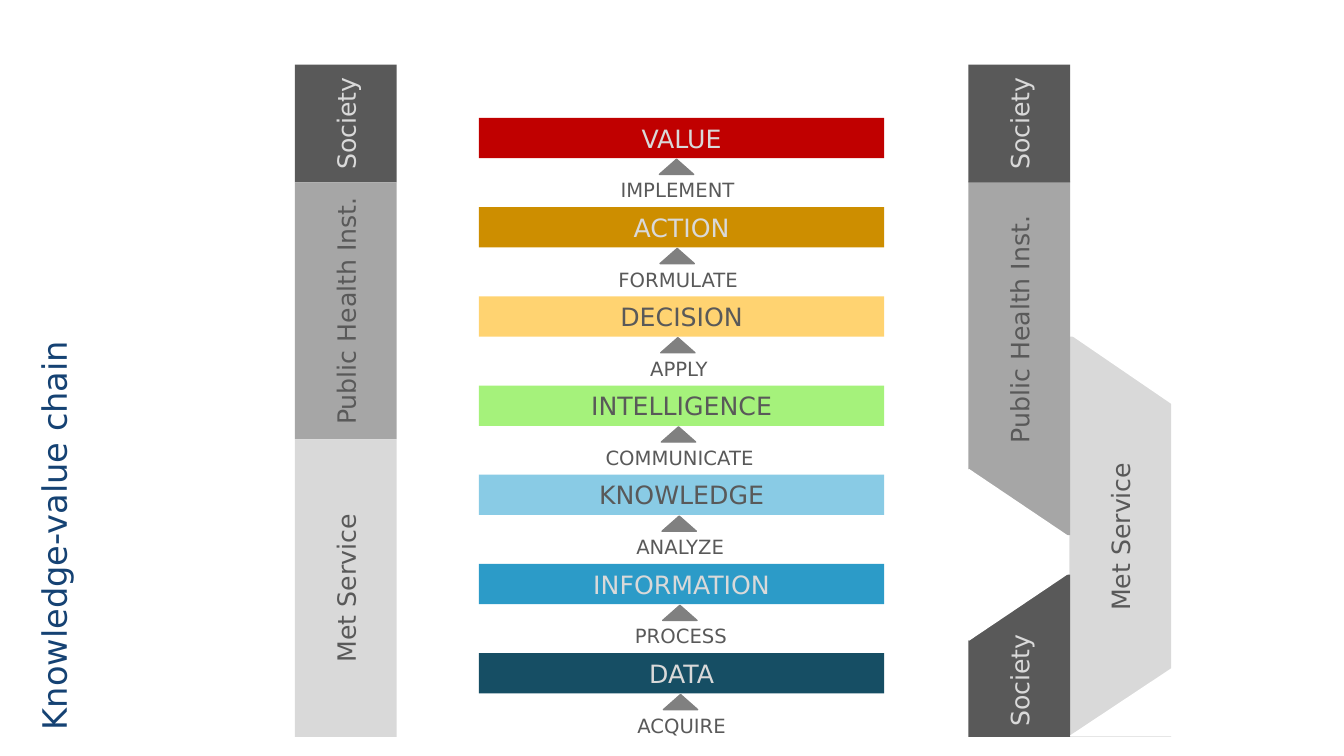
"""Build the knowledge-value chain slide."""
from pptx import Presentation
from pptx import util as u
from pptx.dml.color import RGBColor
from pptx.enum import shapes, text

DARK, MID, LIGHT, WHITE = "595959", "A6A6A6", "D9D9D9", "FFFFFF"
ARROW, NAVY = "808080", "154273"
CENTER, LEFT = text.PP_ALIGN.CENTER, text.PP_ALIGN.LEFT
PRESET = shapes.MSO_SHAPE


def color(value):
    return RGBColor.from_string(value)


class ChainSlide:
    font = "DejaVu Sans"

    def __init__(self, presentation):
        self.slide = presentation.slides.add_slide(presentation.slide_layouts[5])

    def set_text(self, frame, words, size, ink, align=CENTER, anchor=text.MSO_ANCHOR.MIDDLE):
        frame.text = words
        frame.word_wrap = True
        frame.auto_size = text.MSO_AUTO_SIZE.NONE
        frame.vertical_anchor = anchor
        paragraph = frame.paragraphs[0]
        paragraph.alignment = align
        paragraph.font.name = self.font
        paragraph.font.size = u.Pt(size)
        paragraph.font.color.rgb = color(ink)
        return paragraph

    def title(self, words, box):
        shape = self.slide.shapes.title
        shape.left, shape.top, shape.width, shape.height = map(u.Inches, box)
        shape.rotation = 270
        paragraph = self.set_text(shape.text_frame, words, 24, NAVY, LEFT, text.MSO_ANCHOR.BOTTOM)
        paragraph.line_spacing = 0.9

    def shape(self, preset, box, fill, outlined=False):
        shape = self.slide.shapes.add_shape(preset, *map(u.Inches, box))
        shape.shadow.inherit = False
        shape.fill.solid()
        shape.fill.fore_color.rgb = color(fill)
        if outlined:
            shape.line.color.rgb = color(fill)
            shape.line.width = u.Pt(1)
        else:
            shape.line.fill.background()
        return shape

    def bar(self, words, box, fill, ink, align=CENTER):
        shape = self.shape(PRESET.RECTANGLE, box, fill)
        self.set_text(shape.text_frame, words, 18, ink, align)
        return shape

    def column(self, words, center_x, top, length, fill, ink, align=CENTER, indent=0.1):
        """Draw a bar turned to read upwards, placed by its visible top and length."""
        breadth = 1.01
        box = (center_x - length / 2, top + (length - breadth) / 2, length, breadth)
        shape = self.bar(words, box, fill, ink, align)
        shape.rotation = 270
        shape.text_frame.margin_left = u.Inches(indent)

    def label(self, words, box):
        shape = self.slide.shapes.add_textbox(*map(u.Inches, box))
        self.set_text(shape.text_frame, words, 14, DARK, anchor=text.MSO_ANCHOR.TOP)

    def corner_cut(self, box, rotation=0, flipped=False):
        shape = self.shape(PRESET.RIGHT_TRIANGLE, box, WHITE, outlined=True)
        shape.rotation = rotation
        if flipped:
            shape._element.spPr.xfrm.set("flipV", "1")


def main():
    presentation = Presentation()
    presentation.slide_width = u.Inches(13.33)
    presentation.slide_height = u.Inches(7.5)
    chain = ChainSlide(presentation)
    chain.title("Knowledge-value chain", (-5.71, 0.85, 11.95, 1.04))

    steps = [
        ("DATA", "164E64", LIGHT, "ACQUIRE"),
        ("INFORMATION", "2C9BC8", LIGHT, "PROCESS"),
        ("KNOWLEDGE", "89CBE5", DARK, "ANALYZE"),
        ("INTELLIGENCE", "A5F27B", DARK, "COMMUNICATE"),
        ("DECISION", "FFD371", DARK, "APPLY"),
        ("ACTION", "CD8E00", LIGHT, "FORMULATE"),
        ("VALUE", "C00000", LIGHT, "IMPLEMENT"),
    ]
    pitch = 5.31 / (len(steps) - 1)
    drift = 0.04 / (len(steps) - 1)
    for index, (stage, fill, ink, verb) in enumerate(steps):
        top = 6.48 - index * pitch
        shift = index * drift
        chain.bar(stage, (4.75, top, 4.02, 0.4), fill, ink)
        chain.label(verb, (4.75 - shift, top + 0.55, 4.02, 0.34))
        chain.shape(PRESET.ISOSCELES_TRIANGLE, (6.58 - shift, top + 0.41, 0.34, 0.15), ARROW, outlined=True)

    chain.column("Society", 3.43, 0.64, 1.17, DARK, LIGHT)
    chain.column("Public Health Inst.", 3.43, 1.81, 2.55, MID, DARK)
    chain.column("Met Service", 3.43, 4.36, 2.95, LIGHT, DARK)

    chain.column("Met Service", 11.11, 3.34, 3.97, LIGHT, DARK)
    chain.column("Public Health Inst.", 10.11, 1.8, 3.51, MID, DARK, indent=0.67)
    chain.column("Society", 10.11, 0.64, 1.17, DARK, LIGHT)
    chain.column("Society", 10.11, 5.7, 1.61, DARK, LIGHT, LEFT)

    chain.corner_cut((10.64, 3.33, 0.98, 0.67), rotation=180)
    chain.corner_cut((9.61, 4.66, 0.98, 0.66))
    chain.corner_cut((9.61, 5.69, 0.98, 0.66), flipped=True)
    chain.corner_cut((10.62, 6.63, 1.01, 0.67), rotation=180, flipped=True)

    presentation.save("out.pptx")


if __name__ == "__main__":
    main()
